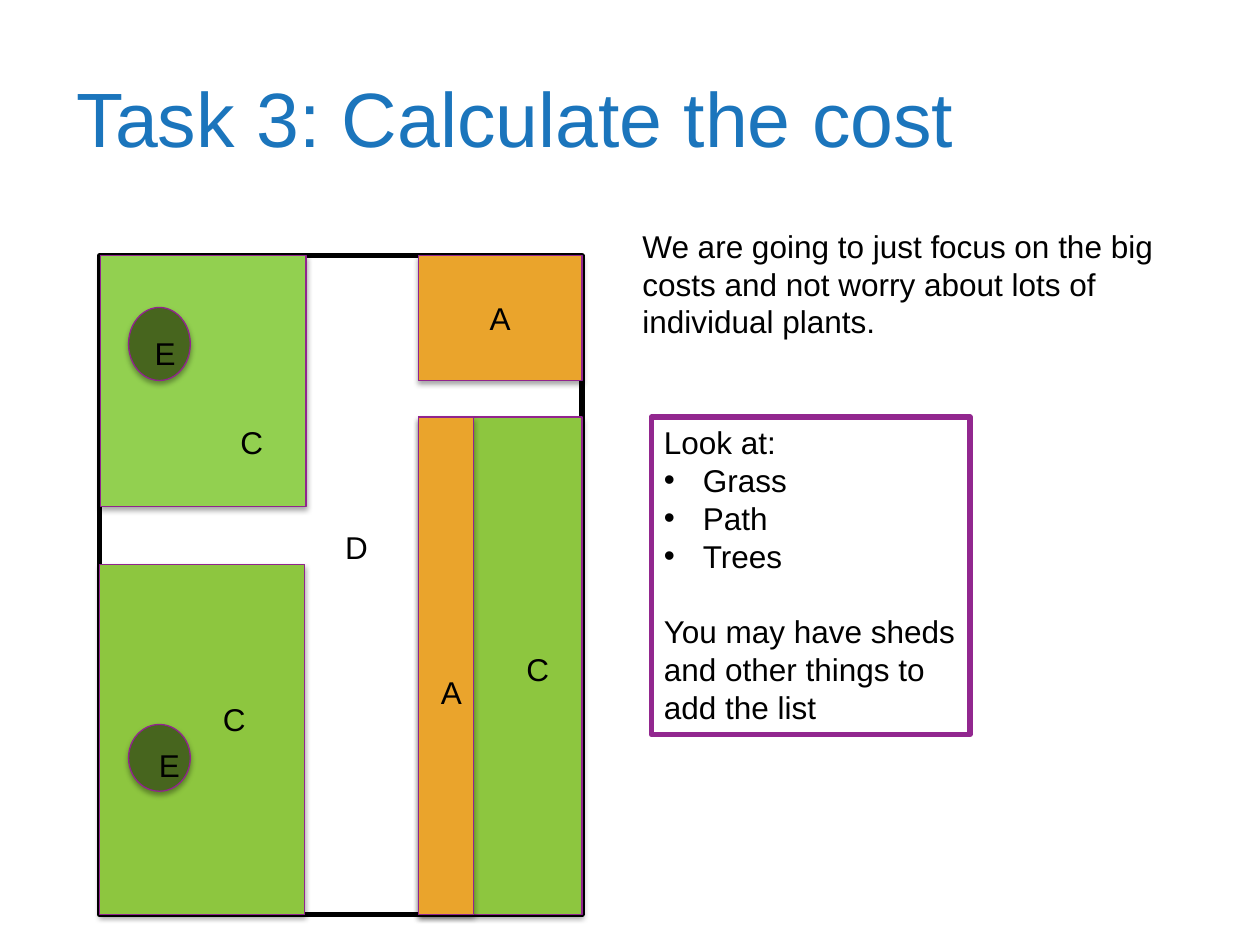
from lxml import etree
from pptx import Presentation
from pptx.dml.color import RGBColor
from pptx.enum.shapes import MSO_SHAPE
from pptx.enum.text import MSO_ANCHOR, PP_ALIGN
from pptx.oxml.ns import qn
from pptx.util import Inches, Pt

BLACK = RGBColor(0x00, 0x00, 0x00)
BLUE = RGBColor(0x1B, 0x75, 0xBC)
PURPLE = RGBColor(0x91, 0x24, 0x8E)
FRAME_PURPLE = RGBColor(0x92, 0x27, 0x8F)
GRASS = RGBColor(0x8D, 0xC6, 0x3F)
LIGHT_GRASS = RGBColor(0x92, 0xD0, 0x50)
BED = RGBColor(0xEA, 0xA4, 0x2C)
TREE = RGBColor(0x47, 0x65, 0x1E)

TITLE = "Task 3: Calculate the cost"
INTRO = ("We are going to just focus on the big costs and not worry "
         "about lots of individual plants.")
CHECKLIST_HEADING = "Look at:"
CHECKLIST = ["Grass", "Path", "Trees"]
CHECKLIST_NOTE = "You may have sheds and other things to add the list"

RECTANGLE, OVAL = MSO_SHAPE.RECTANGLE, MSO_SHAPE.OVAL
GARDEN = (0.79, 2.03, 3.83, 5.23)
AREAS = [
    (RECTANGLE, GRASS, (0.79, 4.48, 1.63, 2.78), ""),
    (RECTANGLE, LIGHT_GRASS, (0.8, 2.03, 1.63, 1.99), ""),
    (RECTANGLE, BED, (3.32, 2.03, 1.3, 0.99), "A"),
    (RECTANGLE, GRASS, (3.32, 3.31, 1.3, 3.95), ""),
    (RECTANGLE, BED, (3.32, 3.31, 0.44, 3.95), ""),
    (OVAL, TREE, (1.02, 2.44, 0.49, 0.58), ""),
    (OVAL, TREE, (1.02, 5.75, 0.49, 0.53), ""),
]
LABEL_HEIGHT = 0.36
LABELS = [
    ("A", 3.5, 5.29, 0.04),
    ("C", 1.81, 3.31, 0.24),
    ("C", 1.67, 5.51, 0.24),
    ("C", 4.08, 5.11, 0.24),
    ("D", 2.64, 4.14, 0.48),
    ("E", 1.13, 2.6, 0.24),
    ("E", 1.19, 5.87, 0.17),
]


def add_run(paragraph, text, size=18, color=BLACK):
    run = paragraph.add_run()
    run.text = text
    run.font.name = "Arial"
    run.font.size = Pt(size)
    run.font.color.rgb = color


def add_text(shapes, box, text, size=18, color=BLACK, anchor=MSO_ANCHOR.TOP):
    frame = shapes.add_textbox(*map(Inches, box)).text_frame
    frame.word_wrap = True
    frame.vertical_anchor = anchor
    add_run(frame.paragraphs[0], text, size, color)


def add_outline(shapes, kind, box, line_color, line_width, fill=None):
    shape = shapes.add_shape(kind, *map(Inches, box))
    shape.shadow.inherit = False
    if fill is None:
        shape.fill.background()
    else:
        shape.fill.solid()
        shape.fill.fore_color.rgb = fill
    shape.line.color.rgb = line_color
    shape.line.width = Pt(line_width)
    return shape


def add_shadow(shape):
    effects = shape._element.spPr.find(qn("a:effectLst"))
    shadow = etree.SubElement(effects, qn("a:outerShdw"), blurRad=str(Pt(3.1)),
                              dist=str(Pt(1.8)), dir="5400000", rotWithShape="0")
    color = etree.SubElement(shadow, qn("a:srgbClr"), val=str(BLACK))
    etree.SubElement(color, qn("a:alpha"), val="35000")


def add_bullet(paragraph):
    properties = paragraph._p.get_or_add_pPr()
    properties.set("marL", str(Inches(0.31)))
    properties.set("indent", str(Inches(-0.31)))
    etree.SubElement(properties, qn("a:buFont"), typeface="Arial")
    etree.SubElement(properties, qn("a:buChar"), char="•")


def add_garden(slide):
    shapes = slide.shapes.add_group_shape().shapes
    add_outline(shapes, RECTANGLE, GARDEN, BLACK, 3)
    for kind, fill, box, letter in AREAS:
        area = add_outline(shapes, kind, box, PURPLE, 0.75, fill)
        add_shadow(area)
        if letter:
            area.text_frame.vertical_anchor = MSO_ANCHOR.MIDDLE
            paragraph = area.text_frame.paragraphs[0]
            paragraph.alignment = PP_ALIGN.CENTER
            add_run(paragraph, letter)
    for letter, left, top, width in LABELS:
        add_text(shapes, (left, top, width, LABEL_HEIGHT), letter)


def add_checklist(slide):
    box = add_outline(slide.shapes, RECTANGLE, (5.17, 3.31, 2.53, 2.52), FRAME_PURPLE, 3)
    frame = box.text_frame
    frame.word_wrap = True
    frame.vertical_anchor = MSO_ANCHOR.TOP
    add_run(frame.paragraphs[0], CHECKLIST_HEADING)
    for item in CHECKLIST:
        paragraph = frame.add_paragraph()
        add_bullet(paragraph)
        add_run(paragraph, item)
    note = frame.add_paragraph()
    note.space_before = Pt(21.5)
    add_run(note, CHECKLIST_NOTE)
    for paragraph in frame.paragraphs:
        paragraph.alignment = PP_ALIGN.LEFT


def main():
    presentation = Presentation()
    presentation.slide_width, presentation.slide_height = Inches(10), Inches(7.5)
    slide = presentation.slides.add_slide(presentation.slide_layouts[6])
    add_text(slide.shapes, (5, 1.75, 4.49, 4.92), INTRO)
    add_garden(slide)
    add_checklist(slide)
    add_text(slide.shapes, (0.51, 0.3, 8.99, 1.25), TITLE, 44, BLUE, MSO_ANCHOR.MIDDLE)
    presentation.save("out.pptx")


if __name__ == "__main__":
    main()
